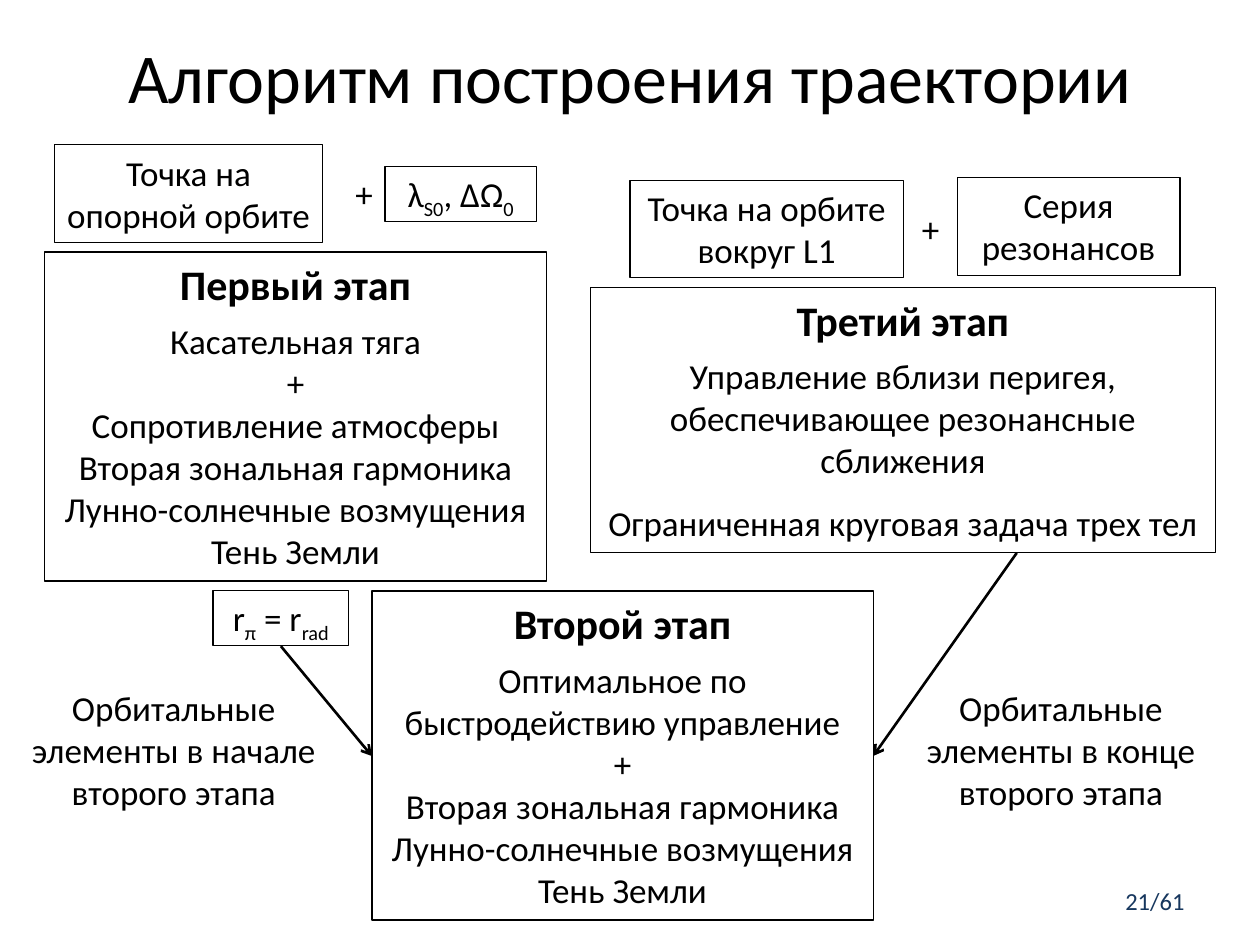
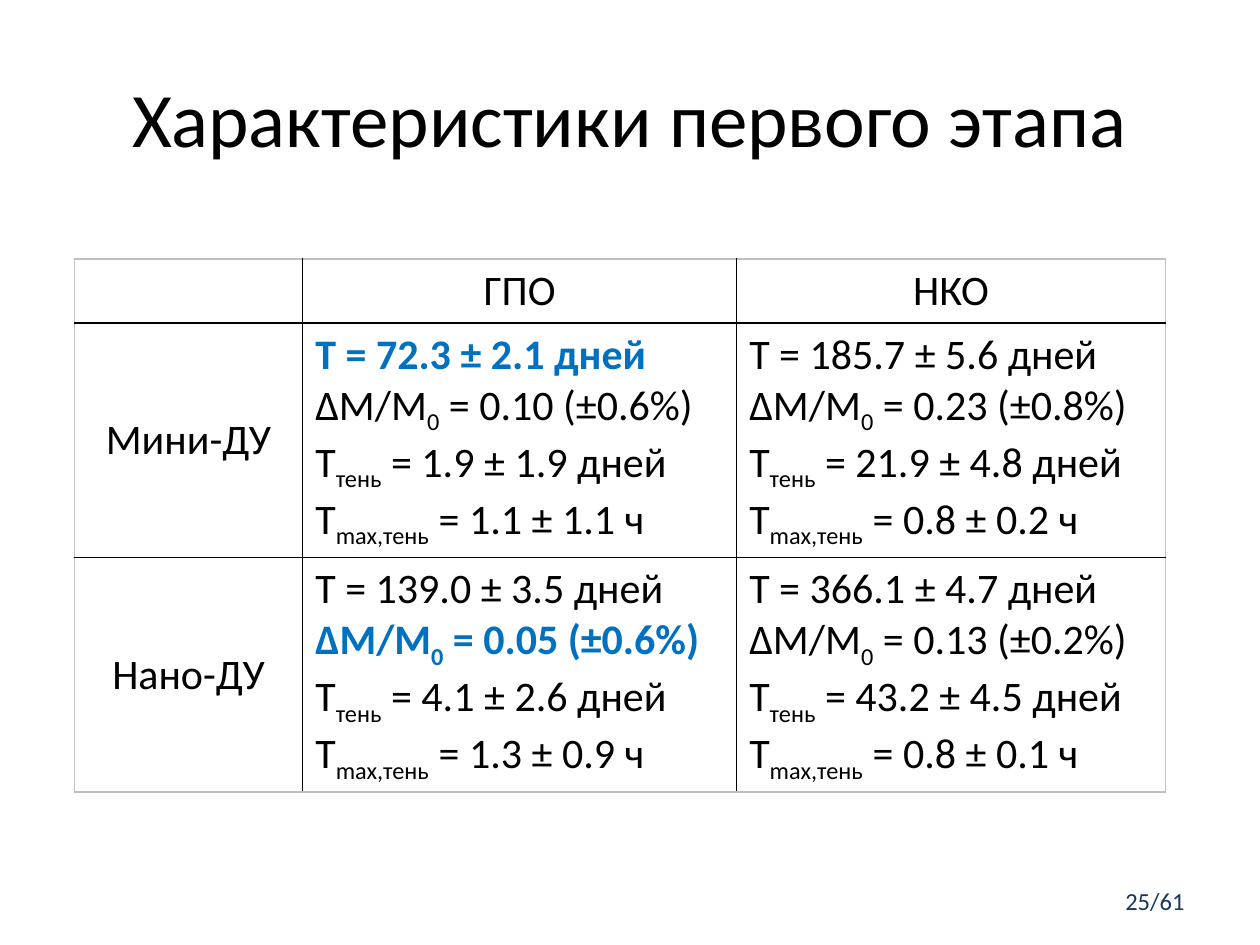
from lxml import etree
from pptx import Presentation
from pptx.dml.color import RGBColor
from pptx.enum.shapes import MSO_CONNECTOR, MSO_SHAPE
from pptx.enum.text import MSO_ANCHOR, MSO_AUTO_SIZE, PP_ALIGN
from pptx.oxml.ns import qn
from pptx.util import Pt

LEFT, CENTER, RIGHT = PP_ALIGN.LEFT, PP_ALIGN.CENTER, PP_ALIGN.RIGHT
TOP, MIDDLE = MSO_ANCHOR.TOP, MSO_ANCHOR.MIDDLE
GROW = MSO_AUTO_SIZE.SHAPE_TO_FIT_TEXT
RECTANGLE, STRAIGHT = MSO_SHAPE.RECTANGLE, MSO_CONNECTOR.STRAIGHT

FONT = "Calibri"
BLACK, NAVY, BLUE, GREY = "000000", "17375E", "0070C0", "BFBFBF"
BODY, HEADING = 20, 24
SLIDE_COUNT = 61

PERTURBATIONS = ["Вторая зональная гармоника", "Лунно-солнечные возмущения", "Тень Земли"]

# Text between < and > is set as a subscript.
MEASURES = ["T = {} дней", "ΔM/M<0> = {}", "T<тень> = {} дней", "T<max,тень> = {} ч"]
ORBITS = ["ГПО", "НКО"]
# Per engine and orbit: the measured values and the index of the best one.
RESULTS = {
    "Мини-ДУ": [
        (["72.3 ± 2.1", "0.10 (±0.6%)", "1.9 ± 1.9", "1.1 ± 1.1"], 0),
        (["185.7 ± 5.6", "0.23 (±0.8%)", "21.9 ± 4.8", "0.8 ± 0.2"], None),
    ],
    "Нано-ДУ": [
        (["139.0 ± 3.5", "0.05 (±0.6%)", "4.1 ± 2.6", "1.3 ± 0.9"], 1),
        (["366.1 ± 4.7", "0.13 (±0.2%)", "43.2 ± 4.5", "0.8 ± 0.1"], None),
    ],
}


def rgb(color):
    return RGBColor.from_string(color)


def para(text, size=BODY, color=BLACK, bold=False, **spacing):
    """Describe one paragraph; spacing holds space_before and space_after in points."""
    return {"text": text, "size": size, "color": color, "bold": bold, "spacing": spacing}


def write(frame, paragraphs, align=CENTER):
    for index, item in enumerate(paragraphs):
        paragraph = frame.add_paragraph() if index else frame.paragraphs[0]
        paragraph.alignment = align
        for name, points in item["spacing"].items():
            setattr(paragraph, name, Pt(points))
        look = {"name": FONT, "size": Pt(item["size"]), "bold": item["bold"]}
        for part, words in enumerate(item["text"].replace(">", "<").split("<")):
            if not words:
                continue
            run = paragraph.add_run()
            run.text = words
            for name, value in look.items():
                setattr(run.font, name, value)
            run.font.color.rgb = rgb(item["color"])
            if part % 2:
                run.font._element.set("baseline", "-25000")


def label(slide, place, paragraphs, align=CENTER, anchor=TOP, fit=GROW):
    frame = slide.shapes.add_textbox(*map(Pt, place)).text_frame
    frame.word_wrap = True
    frame.auto_size = fit
    frame.vertical_anchor = anchor
    write(frame, paragraphs, align)


def outlined_box(slide, place, paragraphs):
    box = slide.shapes.add_shape(RECTANGLE, *map(Pt, place))
    box.shadow.inherit = False
    box.fill.background()
    box.line.color.rgb = rgb(BLACK)
    box.line.width = Pt(0.75)
    frame = box.text_frame
    frame.word_wrap = True
    frame.auto_size = GROW
    frame.vertical_anchor = TOP
    write(frame, paragraphs)


def stage(slide, place, heading, first, others, gap=0):
    """Draw a stage box: bold heading, first line, then the rest after a gap."""
    lead = para(first, space_before=6, space_after=gap)
    outlined_box(slide, place, [para(heading, HEADING, bold=True), lead, *map(para, others)])


def arrow(slide, start, end):
    connector = slide.shapes.add_connector(STRAIGHT, *map(Pt, start + end))
    connector.line.color.rgb = rgb(BLACK)
    connector.line.width = Pt(1.5)
    etree.SubElement(connector.line._get_or_add_ln(), qn("a:tailEnd"), type="arrow")
    etree.SubElement(connector._element.spPr, qn("a:effectLst"))


def border(cell, side, color):
    edge = etree.SubElement(cell._tc.get_or_add_tcPr(), qn(f"a:ln{side}"), w=str(Pt(1)))
    fill = etree.SubElement(edge, qn("a:solidFill"))
    etree.SubElement(fill, qn("a:srgbClr"), val=color)


def results_table(slide, left, top, widths, heights):
    rows, columns = len(heights), len(widths)
    area = map(Pt, (left, top, sum(widths), sum(heights)))
    table = slide.shapes.add_table(rows, columns, *area).table
    table.first_row = table.horz_banding = False
    for column, width in zip(table.columns, widths):
        column.width = Pt(width)
    for row, height in zip(table.rows, heights):
        row.height = Pt(height)

    for column, orbit in enumerate(ORBITS, 1):
        write(table.cell(0, column).text_frame, [para(orbit, HEADING)])
    for row, (engine, results) in enumerate(RESULTS.items(), 1):
        write(table.cell(row, 0).text_frame, [para(engine, HEADING)])
        for column, (values, best) in enumerate(results, 1):
            lines = [
                para(measure.format(value), HEADING, BLUE if i == best else BLACK, i == best)
                for i, (measure, value) in enumerate(zip(MEASURES, values))
            ]
            write(table.cell(row, column).text_frame, lines, LEFT)

    for row in range(rows):
        for column in range(columns):
            cell = table.cell(row, column)
            cell.vertical_anchor = MIDDLE
            outer = {"L": column == 0, "R": column == columns - 1,
                     "T": row == 0, "B": row == rows - 1}
            for side, is_outer in outer.items():
                border(cell, side, GREY if is_outer else BLACK)
            cell.fill.background()


def new_slide(deck, title, title_top, title_size, number):
    slide = deck.slides.add_slide(deck.slide_layouts[6])
    label(slide, (36, title_top, 648, 90), [para(title, title_size)], anchor=MIDDLE, fit=None)
    label(slide, (516, 500.5, 168, 28.75), [para(f"{number}/{SLIDE_COUNT}", 14, NAVY)],
          RIGHT, MIDDLE, None)
    return slide


def algorithm_slide(deck):
    slide = new_slide(deck, "Алгоритм построения траектории", -2, 40, 21)
    arrow(slide, (160.5, 369.25), (212.5, 432))
    arrow(slide, (581, 316), (499, 432))

    inputs = [
        ((31, 82.75, 153.5, 55.75), "Точка на опорной орбите"),
        ((220, 95, 86.5, 31.5), "λ<S0>, ΔΩ<0>"),
        ((121.75, 337.5, 77.5, 31.5), "r<π> = r<rad>"),
        ((360, 103, 156.25, 55.75), "Точка на орбите вокруг L1"),
        ((547, 101.5, 127.25, 55.75), "Серия резонансов"),
    ]
    for place, text in inputs:
        outlined_box(slide, place, [para(text)])

    notes = [
        ((196, 95, 17.5, 31.5), "+"),
        ((518.5, 115, 26.5, 31.5), "+"),
        ((8.5, 388.75, 181.5, 80), "Орбитальные элементы в начале второго этапа"),
        ((518.5, 388.75, 175.5, 80), "Орбитальные элементы в конце второго этапа"),
    ]
    for place, text in notes:
        label(slide, place, [para(text)])

    stage(slide, (25.25, 144, 287.25, 188), "Первый этап", "Касательная тяга",
          ["+", "Сопротивление атмосферы", *PERTURBATIONS])
    stage(slide, (212.5, 337.75, 286.5, 188), "Второй этап",
          "Оптимальное по быстродействию управление", ["+", *PERTURBATIONS])
    stage(slide, (337.5, 164.5, 357, 151.25), "Третий этап",
          "Управление вблизи перигея, обеспечивающее резонансные сближения",
          ["Ограниченная круговая задача трех тел"], gap=12)


def results_slide(deck):
    slide = new_slide(deck, "Характеристики первого этапа", 21.5, 44, 25)
    results_table(slide, 42.5, 148, (130.5, 248, 245), (36.5, 134, 134))


def main():
    deck = Presentation()
    deck.slide_width, deck.slide_height = Pt(720), Pt(540)
    algorithm_slide(deck)
    results_slide(deck)
    deck.save("out.pptx")


if __name__ == "__main__":
    main()
